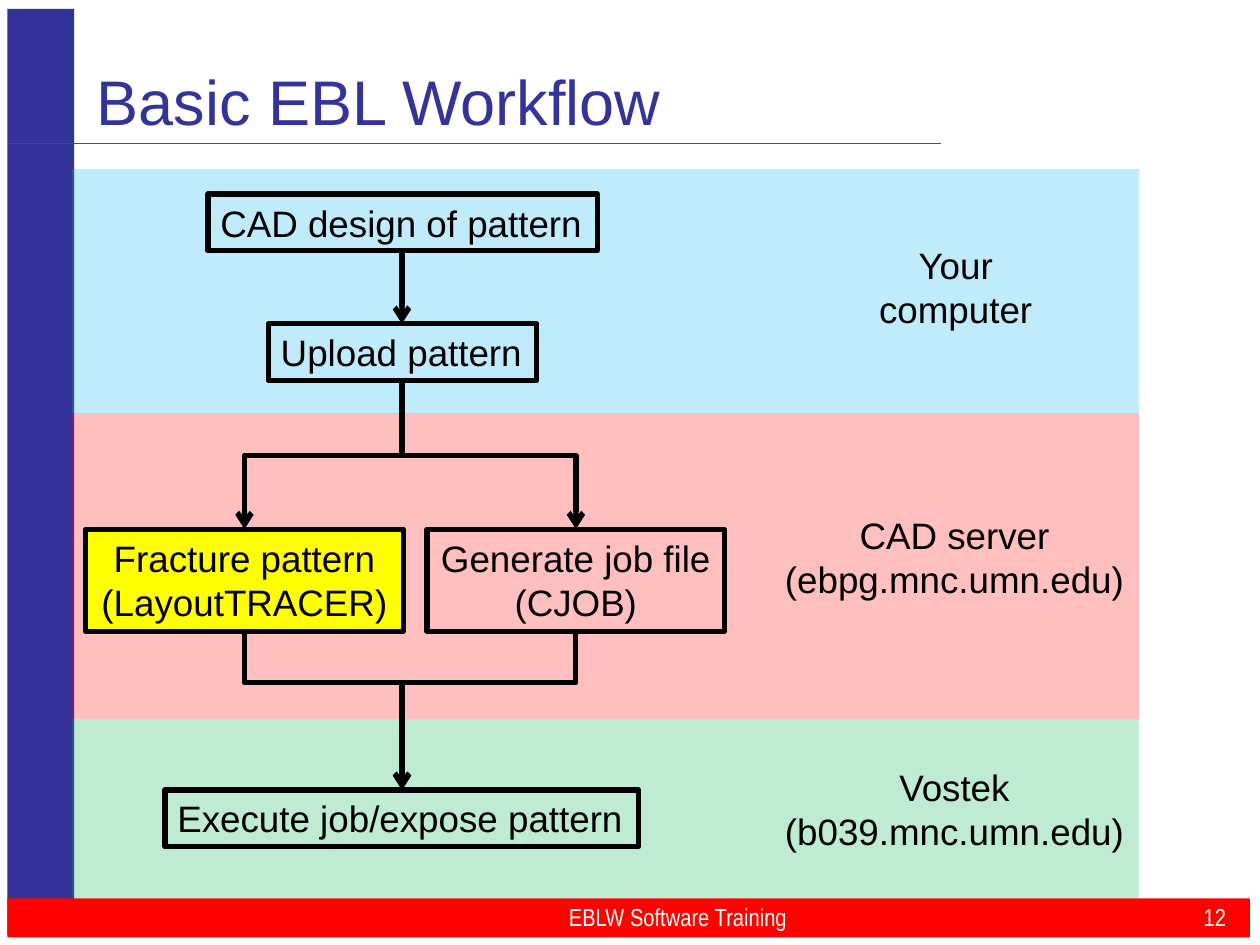
import pptx
import pptx.dml.color
import pptx.enum.shapes
import pptx.enum.text
import pptx.oxml
import pptx.oxml.ns
import pptx.util
import lxml.etree

Inches = pptx.util.Inches
Pt = pptx.util.Pt
qn = pptx.oxml.ns.qn
color = pptx.dml.color.RGBColor.from_string
KIND = pptx.enum.shapes.MSO_CONNECTOR
ALIGN = pptx.enum.text.PP_ALIGN
ANCHOR = pptx.enum.text.MSO_ANCHOR

prs = pptx.Presentation()
prs.slide_width, prs.slide_height = Inches(10), Inches(7.5)
slide = prs.slides.add_slide(prs.slide_layouts[6])
shapes = slide.shapes


def block(at, fill=None, alpha=None, line=None):
    """Add a rectangle; alpha is the opacity in percent, line a width in points."""
    rect = shapes.add_shape(pptx.enum.shapes.MSO_SHAPE.RECTANGLE, *map(Inches, at))
    rect.shadow.inherit = False
    if fill:
        rect.fill.solid()
        rect.fill.fore_color.rgb = color(fill)
    else:
        rect.fill.background()
    if alpha:
        tint = rect._element.spPr.find(".//" + qn("a:srgbClr"))
        lxml.etree.SubElement(tint, qn("a:alpha")).set("val", str(alpha * 1000))
    if line:
        rect.line.color.rgb = color("000000")
        rect.line.width = Pt(line)
    else:
        rect.line.fill.background()
    return rect


def write(shape, text, size, ink="000000", font="Arial", align=ALIGN.CENTER,
          anchor=ANCHOR.TOP, wrap=False):
    frame = shape.text_frame
    frame.text = text
    frame.word_wrap = wrap
    frame.vertical_anchor = anchor
    for para in frame.paragraphs:
        para.alignment = align
        for run in para.runs:
            run.font.size = Pt(size)
            run.font.name = font
            run.font.color.rgb = color(ink)


# Side bar, footer bar and title rule
block((0.06, 0.07, 0.53, 7.35), "333399")
block((0.06, 7.13, 9.86, 0.31), "FF0200")
rule = shapes.add_connector(KIND.STRAIGHT, Inches(0.06), Inches(1.14),
                            Inches(7.47), Inches(1.14))
rule.line.color.rgb = color("FF0200")
rule.line.width = Pt(1)
lxml.etree.SubElement(rule._element.spPr, qn("a:effectLst"))

# One band for each place where work is done
for top, high, fill in [(1.34, 1.94, "00B0F0"), (3.28, 2.43, "FF0000"),
                        (5.71, 1.42, "00B050")]:
    block((0.57, top, 8.47, high), fill, alpha=25)

# Title, footer and page number
for at, text, size, ink, font, align in [
        ((0.67, 0.42, 6.92, 0.75), "Basic EBL Workflow", 36, "333399", "Arial", ALIGN.LEFT),
        ((2.67, 7.15, 5.42, 0.25), "EBLW Software Training", 14, "FFFFFF",
         "Arial Narrow", ALIGN.CENTER),
        ((9, 7.15, 0.83, 0.25), "12", 14, "FFFFFF", "Arial Narrow", ALIGN.RIGHT)]:
    box = shapes.add_textbox(*map(Inches, at))
    write(box, text, size, ink, font, align, ANCHOR.MIDDLE, True)

# Steps
for at, text, fill in [
        ((1.65, 1.54, 3.09, 0.45), "CAD design of pattern", None),
        ((2.13, 2.57, 2.13, 0.45), "Upload pattern", None),
        ((0.68, 4.2, 2.52, 0.81), "Fracture pattern\n(LayoutTRACER)", "FFFF00"),
        ((3.39, 4.2, 2.36, 0.81), "Generate job file\n(CJOB)", None),
        ((1.31, 6.27, 3.76, 0.45), "Execute job/expose pattern", None)]:
    align = ALIGN.CENTER if "\n" in text else ALIGN.LEFT
    write(block(at, fill, line=3), text, 21, align=align)

# Band labels
for at, text in [((6.87, 1.88, 1.43, 0.81), "Your\ncomputer"),
                 ((6.12, 4.02, 2.91, 0.81), "CAD server\n(ebpg.mnc.umn.edu)"),
                 ((6.12, 6.02, 2.91, 0.81), "Vostek\n(b039.mnc.umn.edu)")]:
    write(shapes.add_textbox(*map(Inches, at)), text, 21)

# Arrows: start, end and the share of the way down at which the arrow bends
mid, left, right = 3.19, 1.94, 4.57
for x1, y1, x2, y2, bend in [(mid, 1.99, mid, 2.57, None),
                             (mid, 3.03, left, 4.2, 0.5),
                             (mid, 3.03, right, 4.2, 0.5),
                             (left, 5.01, mid, 6.27, 0.325),
                             (right, 5.01, mid, 6.27, 0.325)]:
    if bend is None:
        arrow = shapes.add_connector(KIND.STRAIGHT, *map(Inches, (x1, y1, x2, y2)))
    else:
        # An elbow leaves sideways, so lay it flat about its centre and turn it
        cx, cy = (x1 + x2) / 2, (y1 + y2) / 2
        dx, dy = abs(x2 - x1) / 2, (y2 - y1) / 2
        side = 1 if x2 > x1 else -1
        arrow = shapes.add_connector(KIND.ELBOW, *map(Inches, (
            cx + side * dy, cy - dx, cx - side * dy, cy + dx)))
        turn = 270 if side > 0 else 90
        arrow._element.spPr.find(qn("a:xfrm")).set("rot", str(turn * 60000))
        guide = lxml.etree.SubElement(
            arrow._element.spPr.find(".//" + qn("a:avLst")), qn("a:gd"))
        guide.set("name", "adj1")
        guide.set("fmla", f"val {round(bend * 100000)}")
    arrow.line.color.rgb = color("000000")
    arrow.line.width = Pt(3)
    tail = lxml.etree.SubElement(arrow.line._get_or_add_ln(), qn("a:tailEnd"))
    tail.set("type", "arrow")
    lxml.etree.SubElement(arrow._element.spPr, qn("a:effectLst"))

prs.save("out.pptx")
